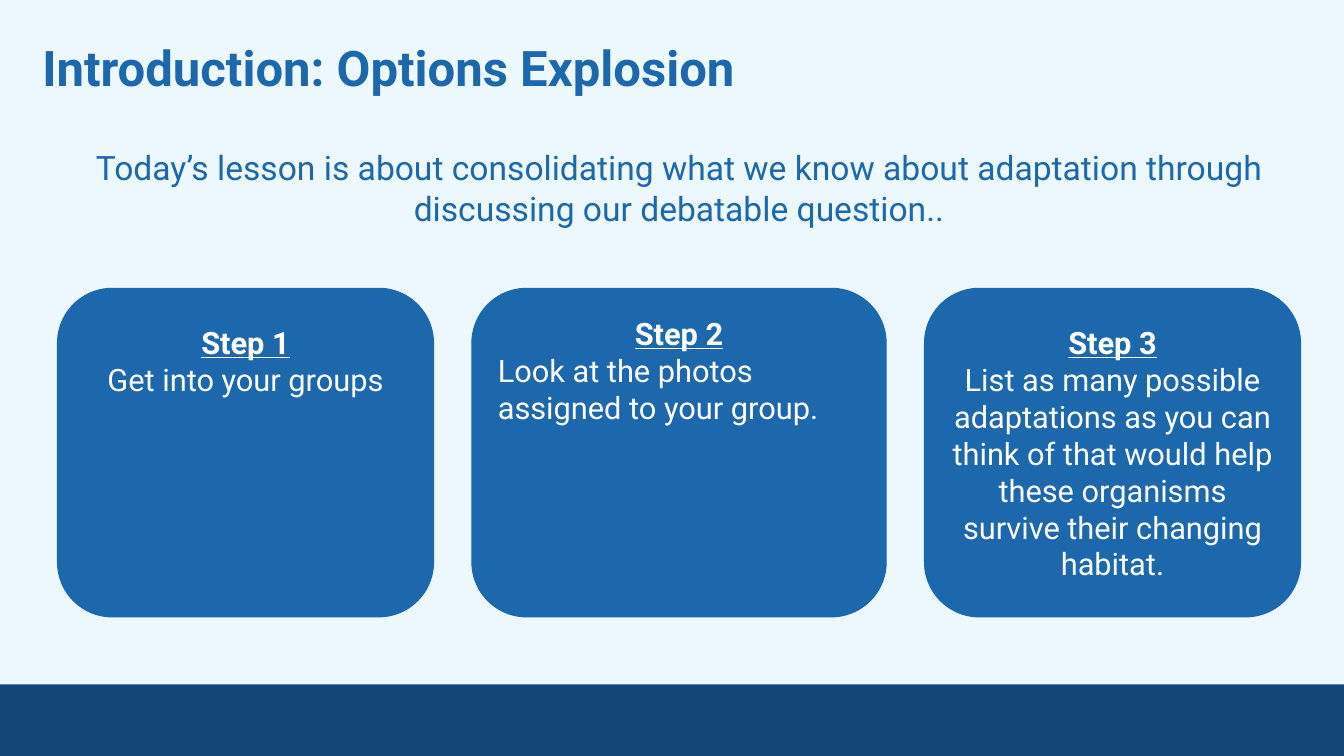
from dataclasses import dataclass

from pptx import Presentation
from pptx.dml.color import RGBColor
from pptx.enum.shapes import MSO_SHAPE
from pptx.enum.text import MSO_ANCHOR, PP_ALIGN
from pptx.util import Inches, Pt


@dataclass(frozen=True)
class Theme:
    font: str = "Roboto"
    sky: RGBColor = RGBColor(0xEC, 0xF8, 0xFE)
    blue: RGBColor = RGBColor(0x1D, 0x67, 0xAC)
    navy: RGBColor = RGBColor(0x14, 0x47, 0x77)
    white: RGBColor = RGBColor(0xFF, 0xFF, 0xFF)
    title_size: int = 35
    intro_size: int = 24
    card_size: int = 22


theme = Theme()
presentation = Presentation()
presentation.slide_width = Inches(13.33)
presentation.slide_height = Inches(7.5)
slide = presentation.slides.add_slide(presentation.slide_layouts[6])
slide.background.fill.solid()
slide.background.fill.fore_color.rgb = theme.sky


def share(left, top, width, height):
    """Turn percentages of the slide's width and height into a position and size."""
    across = presentation.slide_width / 100
    down = presentation.slide_height / 100
    return [round(v) for v in (left * across, top * down, width * across, height * down)]


def write(frame, lines, size, color, inset, top_inset):
    """Fill a frame with lines of (text, alignment, bold, underline)."""
    frame.word_wrap = True
    frame.vertical_anchor = MSO_ANCHOR.TOP
    frame.margin_left = frame.margin_right = frame.margin_bottom = Inches(inset)
    frame.margin_top = Inches(top_inset)
    for index, (text, alignment, bold, underline) in enumerate(lines):
        paragraph = frame.add_paragraph() if index else frame.paragraphs[0]
        paragraph.alignment = alignment
        run = paragraph.add_run()
        run.text = text
        run.font.name = theme.font
        run.font.size = Pt(size)
        run.font.color.rgb = color
        run.font.bold = bold
        run.font.underline = underline


# Footer band
footer = slide.shapes.add_shape(MSO_SHAPE.RECTANGLE, *share(0, 90.53, 100, 9.47))
footer.shadow.inherit = False
footer.fill.solid()
footer.fill.fore_color.rgb = theme.navy
footer.line.fill.background()

# Title and introduction
title = slide.shapes.add_textbox(*share(2.18, 3.2, 91.45, 11.47))
write(title.text_frame, [("Introduction: Options Explosion", PP_ALIGN.LEFT, True, False)],
      theme.title_size, theme.blue, 0.13, 0.13)

intro = slide.shapes.add_textbox(*share(1.65, 18.13, 97.75, 13.47))
intro_text = ("Today’s lesson is about consolidating what we know about adaptation "
              "through discussing our debatable question..")
write(intro.text_frame, [(intro_text, PP_ALIGN.CENTER, False, False)],
      theme.intro_size, theme.blue, 0.1, 0.1)

# Step cards: width share, top inset, alignment, instruction
steps = [
    (27.98, 0.19, PP_ALIGN.CENTER, "Get into your groups"),
    (30.83, 0.1, PP_ALIGN.LEFT, "Look at the photos assigned to your group."),
    (27.98, 0.19, PP_ALIGN.CENTER,
     "List as many possible adaptations as you can think of that would help "
     "these organisms survive their changing habitat."),
]
card_left, card_gap = 4.28, 2.85
for number, (width, top_inset, alignment, instruction) in enumerate(steps, 1):
    card = slide.shapes.add_shape(MSO_SHAPE.ROUNDED_RECTANGLE,
                                  *share(card_left, 38.13, width, 43.47))
    card.shadow.inherit = False
    card.fill.solid()
    card.fill.fore_color.rgb = theme.blue
    card.line.color.rgb = theme.blue
    card.line.width = Pt(0.75)
    write(card.text_frame,
          [(f"Step {number}", PP_ALIGN.CENTER, True, True),
           (instruction, alignment, False, False)],
          theme.card_size, theme.white, 0.1, top_inset)
    card_left += width + card_gap

presentation.save("out.pptx")
